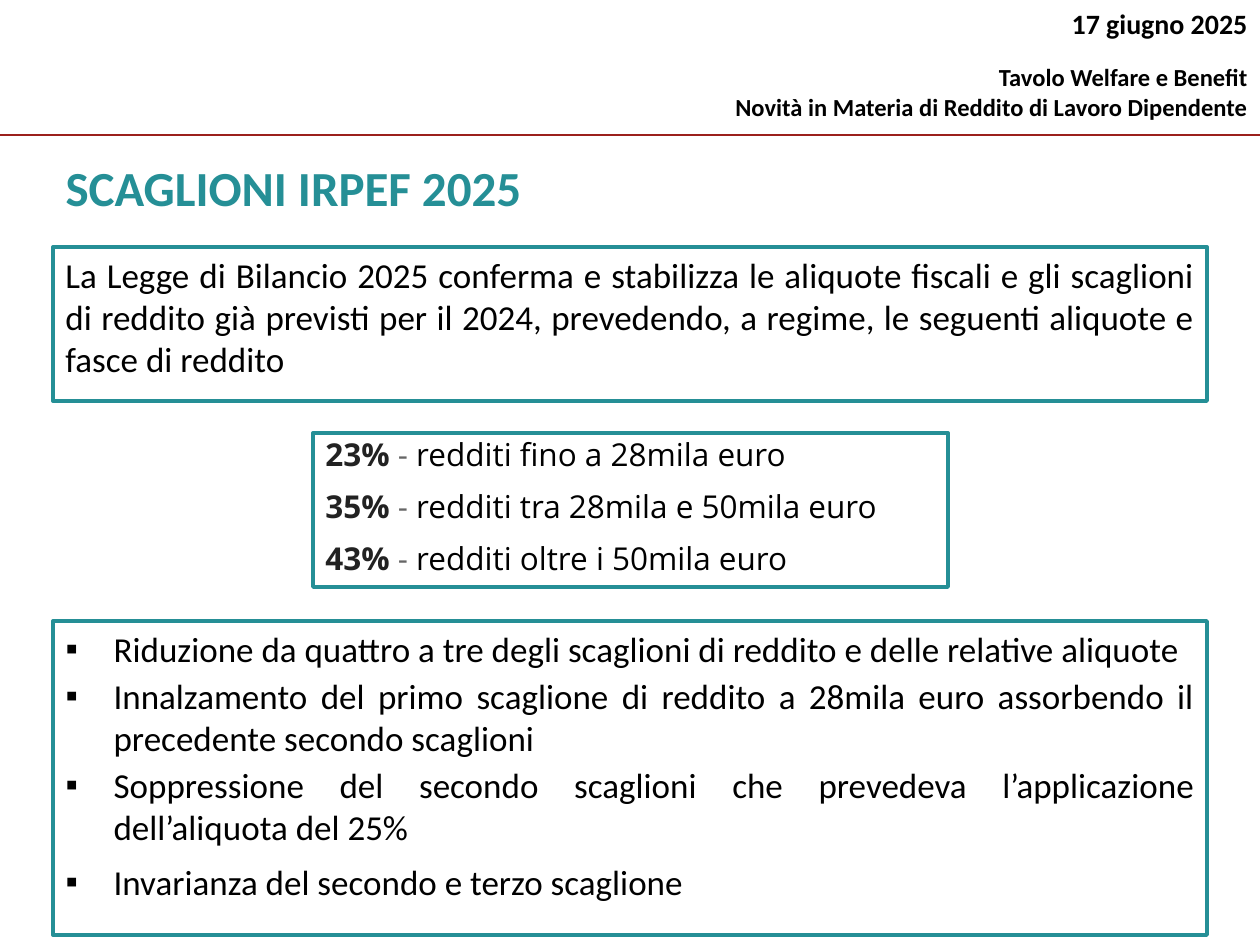
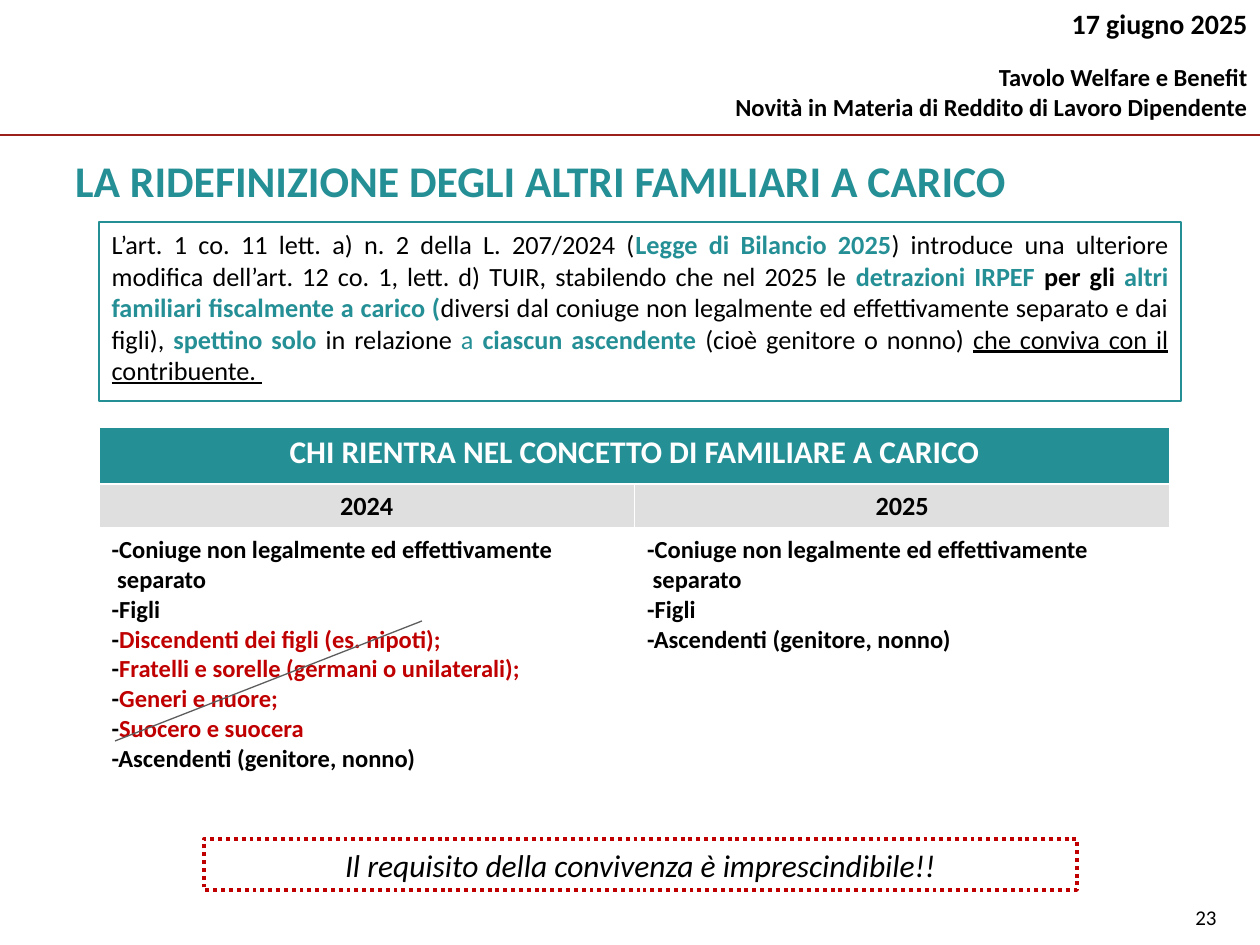
import lxml.etree
import pptx
import pptx.dml.color
import pptx.enum.dml
import pptx.enum.shapes
import pptx.enum.text
import pptx.oxml.ns
import pptx.util

RGB = pptx.dml.color.RGBColor
ALIGN = pptx.enum.text.PP_ALIGN
ANCHOR = pptx.enum.text.MSO_ANCHOR
qn = pptx.oxml.ns.qn
Pt = pptx.util.Pt

TEAL = RGB(0x25, 0x8F, 0x96)
RULE_RED = RGB(0x9B, 0x20, 0x1C)
RED = RGB(0xC0, 0x00, 0x00)
BLACK = RGB(0x00, 0x00, 0x00)
WHITE = RGB(0xFF, 0xFF, 0xFF)
SILVER = RGB(0xDF, 0xDF, 0xDF)
INK = RGB(0x22, 0x22, 0x22)
GREY = RGB(0x66, 0x66, 0x66)
STRIKE_GREY = RGB(0x5D, 0x5D, 0x5D)

PX = 914400 / 126


def add_span(para, text, size, colour=BLACK, bold=False, font="Calibri"):
    span = para.add_run()
    span.text = text
    span.font.name = font
    span.font.size = Pt(size)
    span.font.bold = bold
    span.font.color.rgb = colour
    return span


def dress(box, bounds, outline=None, width=0):
    """Place a box, give it an optional outline, and return its text frame."""
    box.left, box.top, box.width, box.height = [round(v * PX) for v in bounds]
    if outline is not None:
        box.shadow.inherit = False
        box.fill.solid()
        box.fill.fore_color.rgb = WHITE
        box.line.color.rgb = outline
        box.line.width = Pt(width)
    frame = box.text_frame
    frame.word_wrap = True
    frame.auto_size = pptx.enum.text.MSO_AUTO_SIZE.NONE
    frame.vertical_anchor = ANCHOR.TOP
    return frame


deck = pptx.Presentation()
deck.slide_width = round(1260 * PX)
deck.slide_height = round(945 * PX)
layout = deck.slide_layouts[1]
brackets_page = deck.slides.add_slide(layout)
family_page = deck.slides.add_slide(layout)
RECT = pptx.enum.shapes.MSO_SHAPE.RECTANGLE

# Shared header text, kept on the layout
header = brackets_page.shapes.add_textbox(0, 0, 0, 0)
frame = dress(header, (683, 0, 577, 129))
header_lines = [
    ("17 giugno 2025", 16, 0),
    ("Tavolo Welfare e Benefit", 14, 12.8),
    ("Novità in Materia di Reddito di Lavoro Dipendente", 14, 0),
]
for index, (text, size, before) in enumerate(header_lines):
    para = frame.add_paragraph() if index else frame.paragraphs[0]
    para.alignment = ALIGN.RIGHT
    para.space_before = Pt(before)
    add_span(para, text, size, bold=True)
layout.shapes.element.append(header.element)

# Titles
titles = [
    (brackets_page, "SCAGLIONI IRPEF 2025", 28, (53, 151, 1142, 96), ALIGN.LEFT),
    (family_page, "LA RIDEFINIZIONE DEGLI ALTRI FAMILIARI A CARICO", 25,
     (5, 147, 1071, 59), ALIGN.CENTER),
]
for page, text, size, bounds, align in titles:
    para = dress(page.shapes.title, bounds).paragraphs[0]
    para.alignment = align
    add_span(para, text, size, TEAL, bold=True)

# Slide 1: opening statement
intro = brackets_page.shapes.add_shape(RECT, 0, 0, 0, 0)
para = dress(intro, (53, 247, 1154, 154), TEAL, 2.25).paragraphs[0]
para.alignment = ALIGN.JUSTIFY
add_span(para, "La Legge di Bilancio 2025 conferma e stabilizza le aliquote fiscali e gli "
         "scaglioni di reddito già previsti per il 2024, prevedendo, a regime, le seguenti "
         "aliquote e fasce di reddito", 20)

# Slide 1: tax rates
rates = brackets_page.shapes.add_shape(RECT, 0, 0, 0, 0)
frame = dress(rates, (313, 433, 635, 154), TEAL, 2.25)
brackets = [
    ("23%", "redditi fino a 28mila euro"),
    ("35%", "redditi tra 28mila e 50mila euro"),
    ("43%", "redditi oltre i 50mila euro"),
]
for index, (rate, income) in enumerate(brackets):
    para = frame.add_paragraph() if index else frame.paragraphs[0]
    para.alignment = ALIGN.LEFT
    para.line_spacing = Pt(19.5)
    para.space_after = Pt(10)
    add_span(para, rate, 18, INK, True, "Open Sans")
    add_span(para, " - ", 18, GREY, font="Open Sans")
    add_span(para, income, 18, font="Open Sans")

# Slide 1: list of changes
frame = dress(brackets_page.placeholders[1], (53, 621, 1154, 314), TEAL, 2.25)
changes = [
    ("Riduzione da quattro a tre degli scaglioni di reddito e delle relative aliquote", 0, 3),
    ("Innalzamento del primo scaglione di reddito a 28mila euro assorbendo il "
     "precedente secondo scaglioni", 0, 3),
    ("Soppressione del secondo scaglioni che prevedeva l’applicazione dell’aliquota del 25%",
     0, 3),
    ("Invarianza del secondo e terzo scaglione", 4, 6),
]
for index, (text, before, after) in enumerate(changes):
    para = frame.add_paragraph() if index else frame.paragraphs[0]
    para.alignment = ALIGN.JUSTIFY
    para.space_before = Pt(before)
    para.space_after = Pt(after)
    props = para._p.get_or_add_pPr()
    props.set("marL", str(round(48 * PX)))
    props.set("indent", str(round(-48 * PX)))
    lxml.etree.SubElement(props, qn("a:buFont"), typeface="Arial")
    lxml.etree.SubElement(props, qn("a:buChar"), char="▪")
    add_span(para, text, 20)

# Slide 2: rule in force
para = dress(family_page.placeholders[1], (99, 222, 1082, 179), TEAL, 1.5).paragraphs[0]
para.alignment = ALIGN.JUSTIFY
para.space_before = Pt(0)
props = para._p.get_or_add_pPr()
props.set("marL", "0")
props.set("indent", "0")
lxml.etree.SubElement(props, qn("a:buNone"))
rule_spans = [
    ("L’art. 1 co. 11 lett. a) n. 2 della L. 207/2024 (", BLACK, False),
    ("Legge di Bilancio 2025", TEAL, True),
    (") introduce una ulteriore modifica dell’art. 12 co. 1, lett. d) TUIR, "
     "stabilendo che nel 2025 le ", BLACK, False),
    ("detrazioni IRPEF ", TEAL, True),
    ("per gli ", BLACK, True),
    ("altri familiari fiscalmente a carico (", TEAL, True),
    ("diversi dal coniuge non legalmente ed effettivamente separato e dai figli), ",
     BLACK, False),
    ("spettino solo ", TEAL, True),
    ("in relazione ", BLACK, False),
    ("a ", TEAL, False),
    ("ciascun ascendente ", TEAL, True),
    ("(cioè genitore o nonno) ", BLACK, False),
]
for text, colour, bold in rule_spans:
    add_span(para, text, 15, colour, bold)
add_span(para, "che conviva con il contribuente. ", 15).font.underline = True

# Slide 2: tables; each cell is a list of lines, each line a list of (text, colour)
spouse = [[("-Coniuge non legalmente ed effettivamente", BLACK)],
          [(" separato", BLACK)],
          [("-Figli", BLACK)]]
removed = [[("-", BLACK), (text, RED)] for text in (
    "Discendenti dei figli (es. nipoti);",
    "Fratelli e sorelle (germani o unilaterali);",
    "Generi e nuore;",
    "Suocero e suocera")]
ascendants = [[("-Ascendenti (genitore, nonno)", BLACK)]]
heading = [[("CHI RIENTRA NEL CONCETTO DI FAMILIARE A CARICO", WHITE)]]
# Row: height, fill, text size, alignment, bottom border, cells
tables = [
    (427, [(59, TEAL, 18, ALIGN.CENTER, 3, [heading])]),
    (484, [(45, SILVER, 15, ALIGN.CENTER, 3, [[[("2024", BLACK)]], [[("2025", BLACK)]]]),
           (253, WHITE, 14, ALIGN.LEFT, 1,
            [spouse + removed + ascendants, spouse + ascendants])]),
]
for top, rows in tables:
    columns = len(rows[0][5])
    height = sum(row[0] for row in rows)
    table = family_page.shapes.add_table(
        len(rows), columns, *[round(v * PX) for v in (99, top, 1071, height)]).table
    table.horz_banding = False
    for r, (row_height, fill, size, align, bottom, cells) in enumerate(rows):
        table.rows[r].height = round(row_height * PX)
        for c, lines in enumerate(cells):
            cell = table.cell(r, c)
            props = cell._tc.get_or_add_tcPr()
            for side, width in (("L", 1), ("R", 1), ("T", 1), ("B", bottom)):
                border = lxml.etree.SubElement(props, qn("a:ln" + side), w=str(Pt(width)))
                paint = lxml.etree.SubElement(border, qn("a:solidFill"))
                lxml.etree.SubElement(paint, qn("a:srgbClr"), val=str(WHITE))
            cell.fill.solid()
            cell.fill.fore_color.rgb = fill
            for index, line in enumerate(lines):
                para = cell.text_frame.add_paragraph() if index else cell.text_frame.paragraphs[0]
                para.alignment = align
                for text, colour in line:
                    add_span(para, text, size, colour, bold=True)

# Slide 2: closing note
note = family_page.shapes.add_shape(RECT, 0, 0, 0, 0)
frame = dress(note, (204, 839, 873, 51), RED, 2.25)
frame.vertical_anchor = ANCHOR.MIDDLE
note.line.dash_style = pptx.enum.dml.MSO_LINE.ROUND_DOT
para = frame.paragraphs[0]
para.alignment = ALIGN.CENTER
add_span(para, "Il requisito della convivenza è imprescindibile!!", 18).font.italic = True

# Slide 2: page number
number = family_page.shapes.add_textbox(0, 0, 0, 0)
add_span(dress(number, (1183, 898, 77, 37)).paragraphs[0], "23", 12)

# Header rule (moved to the layout) and strike through the removed relatives
rules = [
    (brackets_page, (0, 135, 1260, 135), RULE_RED, True),
    (family_page, (115, 741, 422, 621), STRIKE_GREY, False),
]
for page, ends, colour, shared in rules:
    rule = page.shapes.add_connector(
        pptx.enum.shapes.MSO_CONNECTOR.STRAIGHT, *[round(v * PX) for v in ends])
    rule.line.color.rgb = colour
    rule.line.width = Pt(0.75)
    lxml.etree.SubElement(rule.element.spPr, qn("a:effectLst"))
    if shared:
        layout.shapes.element.append(rule.element)

deck.save("out.pptx")
